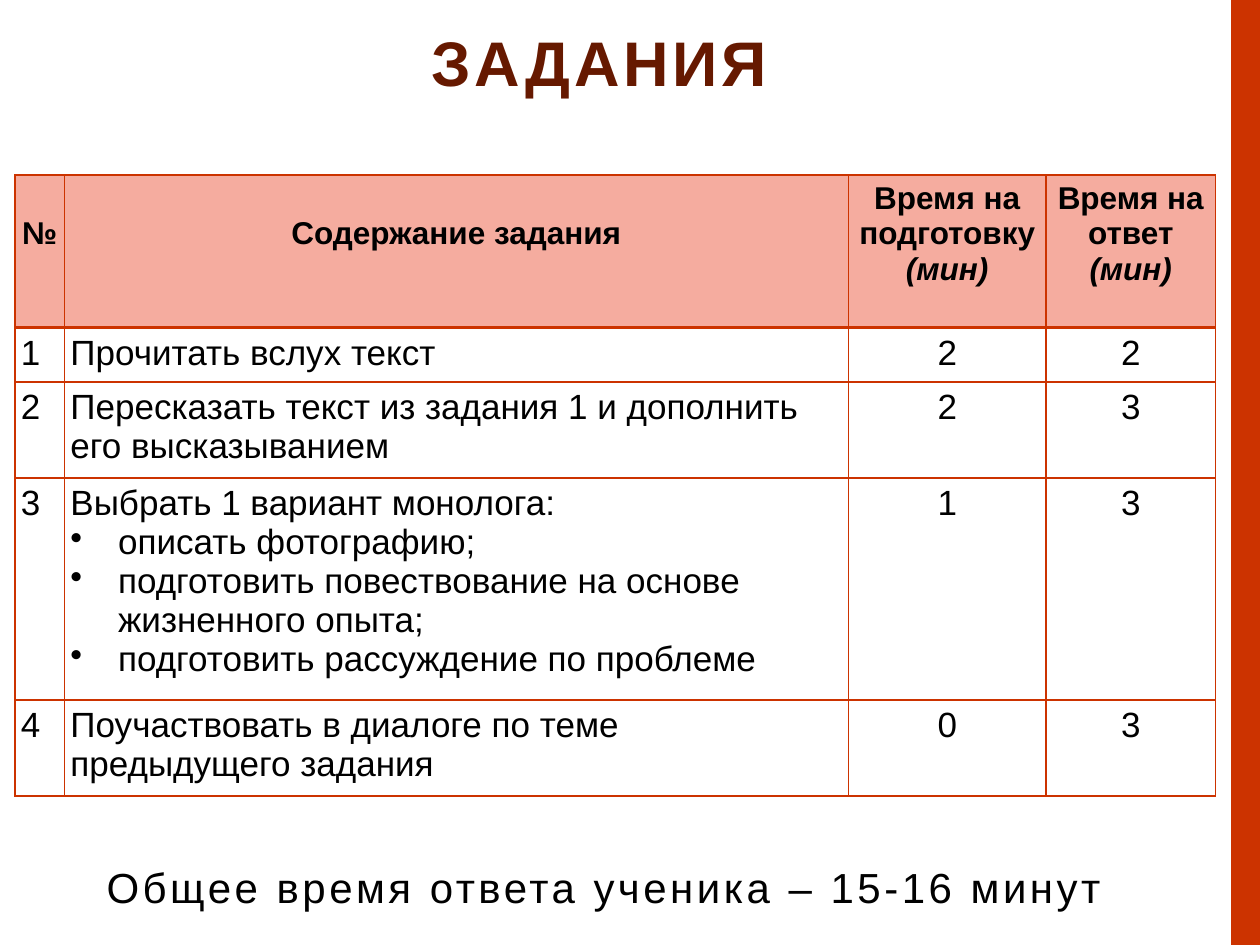
from lxml.etree import SubElement
from pptx import Presentation
from pptx.dml.color import RGBColor
from pptx.enum.shapes import MSO_SHAPE
from pptx.enum.text import MSO_ANCHOR, PP_ALIGN
from pptx.oxml.ns import qn
from pptx.util import Cm, Pt


def color(code):
    return RGBColor.from_string(code)


def style(para, size, code="000000", bold=False, align=PP_ALIGN.CENTER, gap=1.0):
    font = para.font
    font.name, font.size, font.bold = "Arial", Pt(size), bold
    font.color.rgb = color(code)
    para.alignment, para.line_spacing = align, gap
    para.space_before = para.space_after = Pt(0)


RED = "CC3300"
prs = Presentation()
prs.slide_width, prs.slide_height = Cm(25.4), Cm(19.05)
slide = prs.slides.add_slide(prs.slide_layouts[5])

bar = slide.shapes.add_shape(MSO_SHAPE.RECTANGLE, Cm(24.82), Cm(0), Cm(0.58), Cm(19.05))
bar.shadow.inherit = False
bar.fill.solid()
bar.fill.fore_color.rgb = color(RED)
bar.line.fill.background()

total = slide.shapes.title
total.left, total.top, total.width, total.height = Cm(0.08), Cm(17.32), Cm(24.2), Cm(1.2)
head = slide.shapes.add_textbox(Cm(0.08), Cm(0.53), Cm(24), Cm(3))
for box, text, size, code, bold, anchor in [
    (total, "Общее время ответа ученика – 15-16 минут", 24, "000000", False, MSO_ANCHOR.BOTTOM),
    (head, "ЗАДАНИЯ", 36, "661900", True, MSO_ANCHOR.TOP),
]:
    frame = box.text_frame
    frame.text = text
    frame.word_wrap = True
    frame.vertical_anchor = anchor
    para = frame.paragraphs[0]
    style(para, size, code, bold, gap=0.9)
    para.runs[0].font.size = Pt(size)
    para.runs[0].font.color.rgb = color(code)
    para.runs[0]._r.get_or_add_rPr().set("spc", "200")

rows = [
    ["№", "Содержание задания", "Время на подготовку\n(мин)", "Время на ответ\n(мин)"],
    ["1", "Прочитать вслух текст", "2", "2"],
    ["2", "Пересказать текст из задания 1 и дополнить его высказыванием", "2", "3"],
    ["3", "Выбрать 1 вариант монолога:\nописать фотографию;\n"
          "подготовить повествование на основе жизненного опыта;\n"
          "подготовить рассуждение по проблеме", "1", "3"],
    ["4", "Поучаствовать в диалоге по теме предыдущего задания", "0", "3"],
]
widths = [1, 15.8, 3.99, 3.41]
heights = [3.08, 1.05, 1.83, 4.19, 1.82]
table = slide.shapes.add_table(
    len(rows), len(widths), Cm(0.3), Cm(3.53), Cm(sum(widths)), Cm(sum(heights))
).table
table.horz_banding = False
for col, width in zip(table.columns, widths):
    col.width = Cm(width)

for i, (row, height) in enumerate(zip(rows, heights)):
    table.rows[i].height = Cm(height)
    for j, text in enumerate(row):
        cell = table.cell(i, j)
        cell.margin_left = cell.margin_right = Cm(0.12)
        cell.margin_top = cell.margin_bottom = Cm(0.12)
        cell.text = text
        for n, para in enumerate(cell.text_frame.paragraphs):
            if i == 0:
                style(para, 18, bold=True, gap=2.0 if j < 2 else 1.0)
                para.font.italic = n == 1
            else:
                style(para, 20, align=PP_ALIGN.LEFT if j < 2 else PP_ALIGN.CENTER)
                if n:
                    props = para._p.get_or_add_pPr()
                    props.set("marL", str(Cm(0.96)))
                    props.set("indent", str(-Cm(0.96)))
                    mark = props.makeelement(qn("a:buChar"), {"char": "•"})
                    props.find(qn("a:defRPr")).addprevious(mark)
        props = cell._tc.get_or_add_tcPr()
        for side in "LRTB":
            thick = (i, side) in [(0, "B"), (1, "T")]
            line = SubElement(props, qn("a:ln" + side), w=str(Pt(2 if thick else 1)))
            SubElement(SubElement(line, qn("a:solidFill")), qn("a:srgbClr"), val=RED)
        if i == 0:
            cell.fill.solid()
            cell.fill.fore_color.rgb = color("F5AC9F")
        else:
            cell.fill.background()

prs.save("out.pptx")
